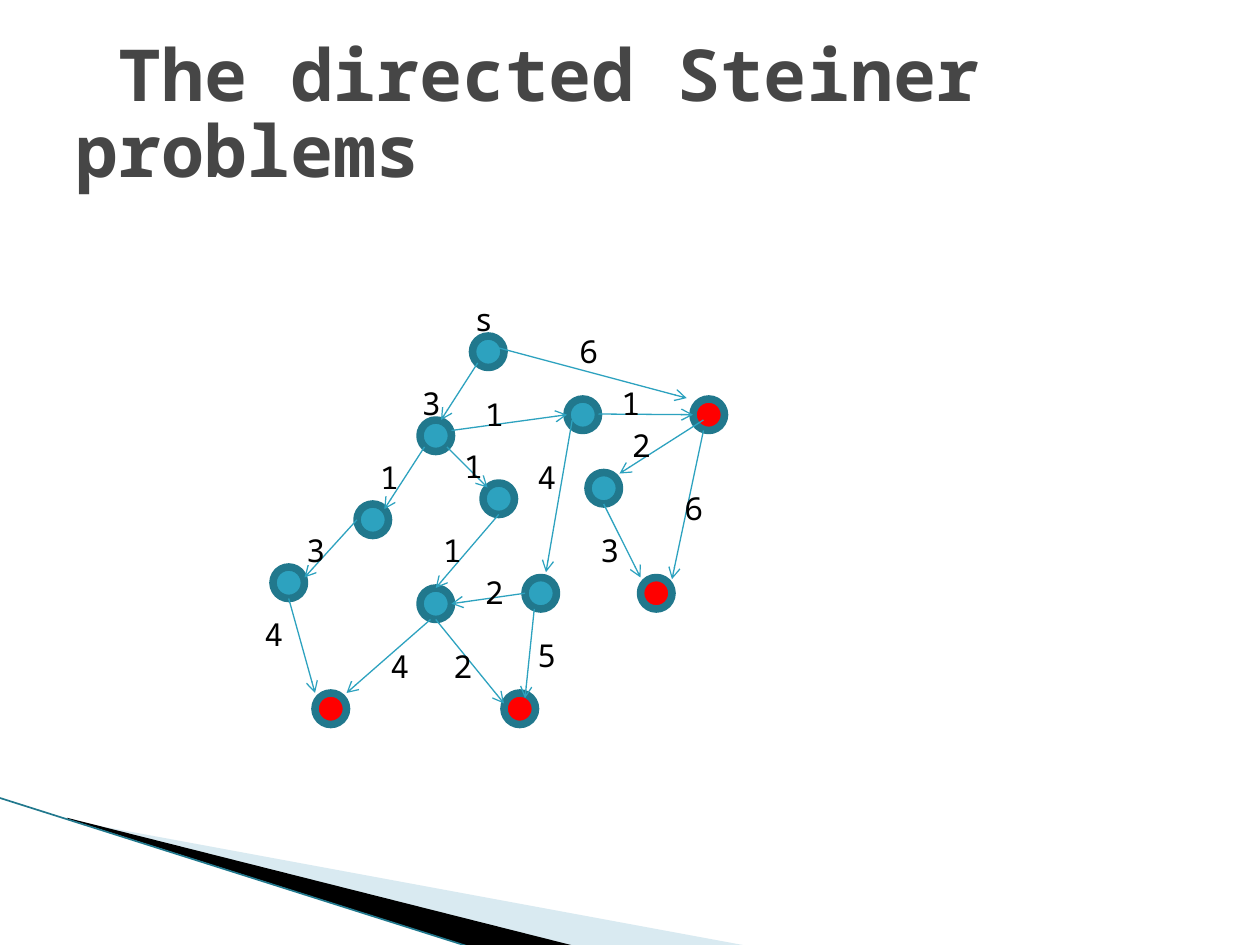
from dataclasses import dataclass

from lxml import etree
from pptx import Presentation
from pptx.dml.color import RGBColor
from pptx.enum import shapes, text
from pptx.oxml.ns import qn
from pptx.util import Pt


@dataclass(frozen=True)
class Theme:
    font: str = "Noto Sans Mono"
    title_size: float = 41
    label_size: float = 18
    title: str = "464646"
    label: str = "000000"
    node: str = "2DA2BF"
    terminal: str = "FF0000"
    ring: str = "21788D"
    edge: str = "2DA2BF"
    pale: str = "A0CBDC"
    dark: str = "000000"


THEME = Theme()
NODE_SIZE = 18

NODES = [
    (126, 24), (96, 72), (180, 60), (60, 120), (132, 108),
    (192, 102), (96, 168), (156, 162), (12, 156),
]
TERMINALS = [(222, 162), (252, 60), (36, 228), (144, 228)]

EDGES = [
    ((138, 30), (248.4, 59.5), "6", (180, 18)),
    ((129, 39.4), (108, 72), "3", (90, 48)),
    ((114, 78), (180, 69), "1", (126, 54)),
    ((198, 68.6), (252, 69), "1", (204, 48)),
    ((258, 78), (240, 163), "6", (240, 108)),
    ((183, 72), (168, 159), "4", (156, 90)),
    ((258, 72), (210, 102.6), "2", (210, 72)),
    ((201, 120), (222, 162), "3", (192, 132)),
    ((161.3, 180), (156, 231), "5", (156, 192)),
    ((156, 171), (114, 177), "2", (126, 156)),
    ((105, 186), (144, 234), "2", (108, 198)),
    ((111.4, 87.4), (134.6, 110.6), "1", (114, 84)),
    ((141, 126), (105, 168), "1", (102, 132)),
    ((98.6, 87.4), (75.6, 123), "1", (66, 90)),
    ((60, 129), (30, 162), "3", (24, 132)),
    ((102, 186), (54, 228), "4", (72, 198)),
    ((21, 174), (36, 228), "4", (0, 180)),
]


def rgb(value):
    return RGBColor.from_string(value)


def add_text(s, box, words, size, color, bold=False):
    sp = s.shapes.add_textbox(*map(Pt, box))
    tf = sp.text_frame
    tf.word_wrap = True
    p = tf.paragraphs[0]
    r = p.add_run()
    r.text = words
    r.font.name = THEME.font
    r.font.size = Pt(size)
    r.font.bold = bold
    r.font.color.rgb = rgb(color)
    return tf


def add_line(s, start, end, color, width, arrow=False):
    line = s.shapes.add_connector(
        shapes.MSO_CONNECTOR.STRAIGHT, *map(Pt, (*start, *end)))
    line.line.color.rgb = rgb(color)
    line.line.width = Pt(width)
    if arrow:
        ln = line.line._get_or_add_ln()
        etree.SubElement(ln, qn("a:tailEnd")).set("type", "arrow")
    etree.SubElement(line._element.spPr, qn("a:effectLst"))


def add_wedge(s, points, color, alpha=None):
    start, *rest = [(Pt(x), Pt(y)) for x, y in points]
    builder = s.shapes.build_freeform(*start, scale=1.0)
    builder.add_line_segments(rest, close=True)
    sp = builder.convert_to_shape()
    sp.shadow.inherit = False
    sp.fill.solid()
    sp.fill.fore_color.rgb = rgb(color)
    sp.line.fill.background()
    if alpha is not None:
        clr = sp._element.spPr.find(".//" + qn("a:srgbClr"))
        etree.SubElement(clr, qn("a:alpha")).set("val", str(alpha * 1000))


def add_corner(s, box):
    x, y, w, h = box

    def at(*points):
        return [(x + px, y + py) for px, py in points]

    add_wedge(s, at((39.6, 12.8), (w, h), (328.3, h), (39.6, 12)),
              THEME.pale, 40)
    add_wedge(s, at((38.2, 11.3), (329, h), (267.8, h), (38.9, 12)),
              THEME.dark)
    add_line(s, *at((-0.7, -0.2), (267.1, h)), THEME.ring, 0.95)


def add_title(s, box, words):
    tf = add_text(s, box, words, THEME.title_size, THEME.title, True)
    tf.vertical_anchor = text.MSO_ANCHOR.MIDDLE
    p = tf.paragraphs[0]
    p.line_spacing = 0.88
    p._p.get_or_add_pPr().set("indent", str(Pt(24.6)))


def add_node(s, x, y, color):
    sp = s.shapes.add_shape(
        shapes.MSO_SHAPE.OVAL, Pt(x), Pt(y), Pt(NODE_SIZE), Pt(NODE_SIZE))
    sp.shadow.inherit = False
    sp.fill.solid()
    sp.fill.fore_color.rgb = rgb(color)
    sp.line.color.rgb = rgb(THEME.ring)
    sp.line.width = Pt(4.33)


def add_graph(s, box):
    left, top, _, _ = box

    def at(point):
        return left + point[0], top + point[1]

    def add_label(words, point):
        add_text(s, (*at(point), 36, 29), words,
                 THEME.label_size, THEME.label)

    for points, color in ((NODES, THEME.node), (TERMINALS, THEME.terminal)):
        for point in points:
            add_node(s, *at(point), color)
    add_label("s", (120, 0))
    for start, end, weight, place in EDGES:
        add_line(s, at(start), at(end), THEME.edge, 0.75, arrow=True)
        add_label(weight, place)


def main():
    prs = Presentation()
    prs.slide_width, prs.slide_height = Pt(720), Pt(540)
    s = prs.slides.add_slide(prs.slide_layouts[6])
    add_corner(s, (0, 456, 428.4, 84.7))
    add_title(s, (36, 21.6, 648, 90), "The directed Steiner problems")
    add_graph(s, (144, 168, 276, 246))
    prs.save("out.pptx")


if __name__ == "__main__":
    main()
